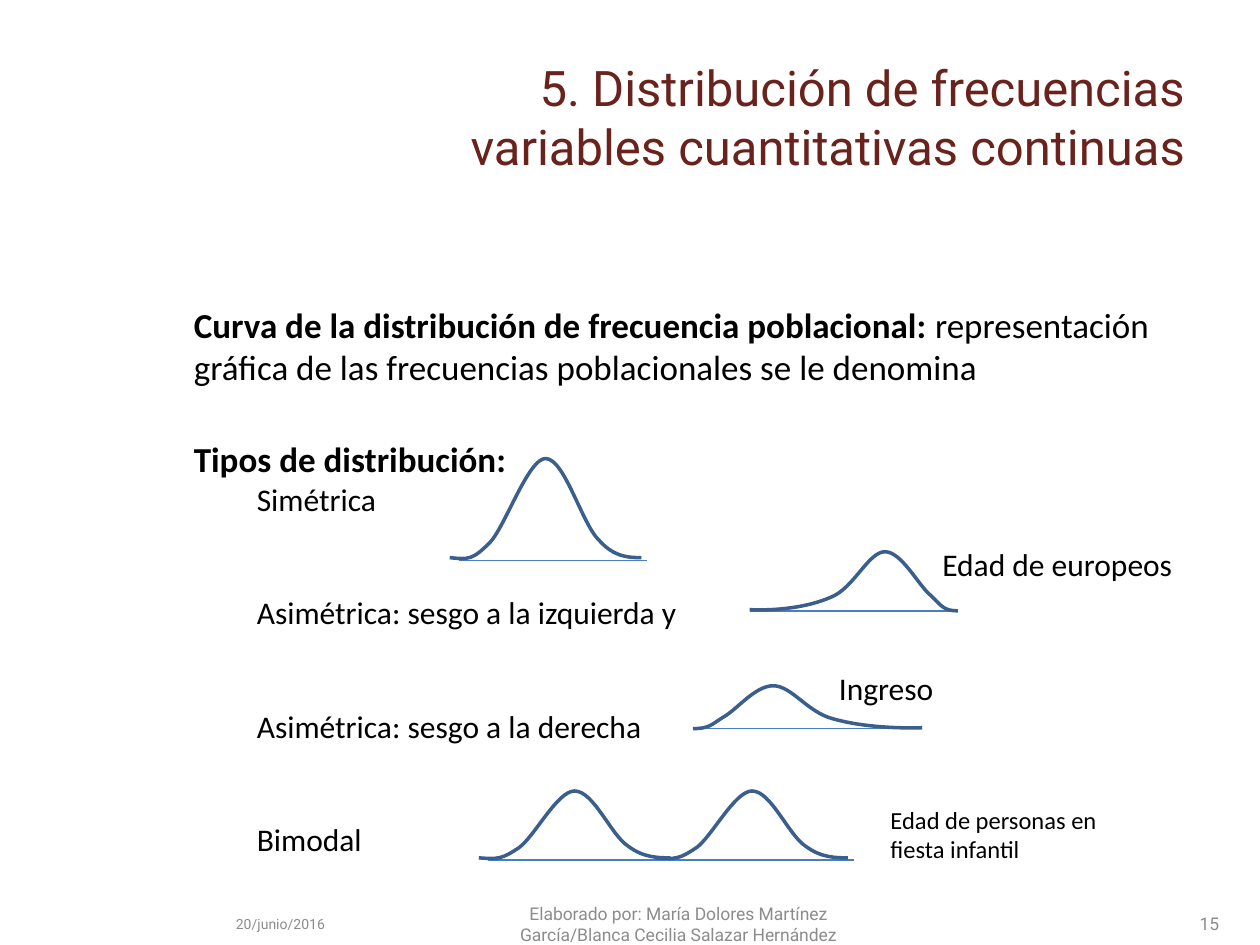
from lxml import etree
from pptx import Presentation
from pptx.dml.color import RGBColor
from pptx.enum import shapes, text
from pptx.oxml import ns
from pptx.util import Pt

MAROON = RGBColor(0x6A, 0x22, 0x1D)
GRAY = RGBColor(0x8C, 0x8C, 0x8C)
BLACK = RGBColor(0, 0, 0)
CURVE_BLUE = RGBColor(0x3A, 0x5F, 0x8C)
AXIS_BLUE = RGBColor(0x4B, 0x7E, 0xBC)

BELL = [(0, 0.98), (0.1, 1), (0.12, 1), (0.21, 0.83), (0.29, 0.67), (0.41, 0), (0.5, 0),
        (0.6, 0), (0.69, 0.65), (0.78, 0.81), (0.86, 0.98), (0.94, 0.98), (1, 0.98)]
LEFT_SKEW = [(0, 0.98), (0.13, 1), (0.28, 0.94), (0.39, 0.77), (0.5, 0.62), (0.57, 0), (0.65, 0),
             (0.73, 0), (0.81, 0.57), (0.87, 0.74), (0.92, 0.91), (0.93, 1), (1, 1)]
RIGHT_SKEW = [(1 - x, y) for x, y in LEFT_SKEW]


def add_text(slide, box, paragraphs, align="LEFT", anchor="TOP"):
    """Add a text box; each paragraph is (runs, spacing), each run (wording, font values)."""
    frame = slide.shapes.add_textbox(*map(Pt, box)).text_frame
    frame.word_wrap = True
    frame.vertical_anchor = text.MSO_ANCHOR[anchor]
    for index, (runs, layout) in enumerate(paragraphs):
        paragraph = frame.paragraphs[0] if index == 0 else frame.add_paragraph()
        paragraph.alignment = text.PP_ALIGN[align]
        if "indent" in layout:
            paragraph._p.get_or_add_pPr().set("marL", str(Pt(layout["indent"])))
        if "before" in layout:
            paragraph.space_before = Pt(layout["before"])
        for wording, values in runs:
            for number, line in enumerate(wording.split("\n")):
                if number:
                    paragraph.add_line_break()
                run = paragraph.add_run()
                run.text = line
                style = {"name": "Calibri", "color": BLACK, "bold": False, **values}
                run.font.color.rgb = style.pop("color")
                for name, value in style.items():
                    setattr(run.font, name, value)


def add_label(slide, box, wording, size, **layout):
    """Add a text box with one style of text."""
    values = {"size": Pt(size), **layout.pop("font", {})}
    add_text(slide, box, [([(wording, values)], {})], **layout)


def bend(shape):
    """Turn each three line segments of a freeform into one cubic Bézier segment."""
    outline = shape._element.find(".//" + ns.qn("a:path"))
    lines = outline.findall(ns.qn("a:lnTo"))
    for first in range(0, len(lines), 3):
        cubic = etree.SubElement(outline, ns.qn("a:cubicBezTo"))
        for line in lines[first:first + 3]:
            cubic.append(line[0])
            outline.remove(line)


def add_curve(slide, box, profile, axis_box):
    """Draw a distribution curve in the box over an axis (x, y shift, width)."""
    left, top, width, height = box
    shift_x, shift_y, axis_width = axis_box
    x, y = left + shift_x, top + height + shift_y
    axis = slide.shapes.add_connector(shapes.MSO_CONNECTOR.STRAIGHT,
                                      Pt(x), Pt(y), Pt(x + axis_width), Pt(y))
    axis.line.color.rgb = AXIS_BLUE
    axis.line.width = Pt(0.75)
    etree.SubElement(axis._element.spPr, ns.qn("a:effectLst"))

    points = [(Pt(left + px * width), Pt(top + py * height)) for px, py in profile]
    builder = slide.shapes.build_freeform(*points[0])
    builder.add_line_segments(points[1:], close=False)
    curve = builder.convert_to_shape()
    bend(curve)
    curve.shadow.inherit = False
    curve.fill.background()
    curve.line.color.rgb = CURVE_BLUE
    curve.line.width = Pt(2)


def add_title(slide, box):
    """Add the slide title."""
    add_label(slide, box, "5. Distribución de frecuencias\nvariables cuantitativas continuas", 28,
              font={"name": "Roboto", "color": MAROON}, align="RIGHT", anchor="MIDDLE")


def add_definition(slide, box):
    """Add the definition of the population frequency curve."""
    runs = [("Curva de la distribución de frecuencia poblacional: ", {"size": Pt(20), "bold": True}),
            ("representación gráfica de las frecuencias poblacionales se le denomina",
             {"size": Pt(20)})]
    add_text(slide, box, [(runs, {})])


def add_types(slide, box):
    """Add the list of distribution types with evenly spaced items."""
    items = ["Simétrica", "Asimétrica: sesgo a la izquierda y",
             "Asimétrica: sesgo a la derecha", "Bimodal"]
    paragraphs = [([("Tipos de distribución:", {"size": Pt(20), "bold": True})], {})]
    for index, item in enumerate(items):
        layout = {"indent": 36, "before": 43.2 if index else 0.4}
        paragraphs.append(([(item, {"size": Pt(18)})], layout))
    add_text(slide, box, paragraphs)


def add_examples(slide, left, top):
    """Draw the curves and their example labels from the given corner."""
    bell_axis = (5.5, 0.5, 107.5)
    curves = [((171.4, 53.3, 119, 33.8), LEFT_SKEW, (0, 0, 119)),
              ((139, 129.9, 131, 24.5), RIGHT_SKEW, (0, 0, 131)),
              ((16.6, 190, 109.5, 39), BELL, bell_axis),
              ((118, 190, 109.5, 39), BELL, bell_axis),
              ((0, 0, 109.5, 57.8), BELL, bell_axis)]
    for (x, y, width, height), profile, axis_box in curves:
        add_curve(slide, (left + x, top + y, width, height), profile, axis_box)
    labels = [(274.4, 46, 29, "Edad de europeos", 18),
              (215.3, 116.7, 29, "Ingreso", 18),
              (244.8, 194.5, 41, "Edad de personas en fiesta infantil", 14)]
    for x, y, height, wording, size in labels:
        add_label(slide, (left + x, top + y, 149, height), wording, size)


def add_footer(slide, top, height):
    """Add the date, authors and slide number."""
    parts = [(76.3, 168, "20/junio/2016", 8, "CENTER"),
             (273.6, 228, "Elaborado por: María Dolores Martínez "
              "García/Blanca Cecilia Salazar Hernández", 10, "CENTER"),
             (535.7, 168, "15", 10, "RIGHT")]
    for left, width, wording, size, align in parts:
        add_label(slide, (left, top, width, height), wording, size,
                  font={"name": "Roboto", "color": GRAY}, align=align, anchor="MIDDLE")


def main():
    """Build and save the presentation."""
    presentation = Presentation()
    presentation.slide_width, presentation.slide_height = Pt(720), Pt(540)
    slide = presentation.slides.add_slide(presentation.slide_layouts[6])
    add_title(slide, (133.2, 21.6, 550.8, 90))
    add_examples(slide, 257, 262)
    add_types(slide, (103.7, 246.3, 360, 250))
    add_definition(slide, (103.7, 170, 567.4, 55.7))
    add_footer(slide, 513.6, 28.8)
    presentation.save("out.pptx")


if __name__ == "__main__":
    main()
